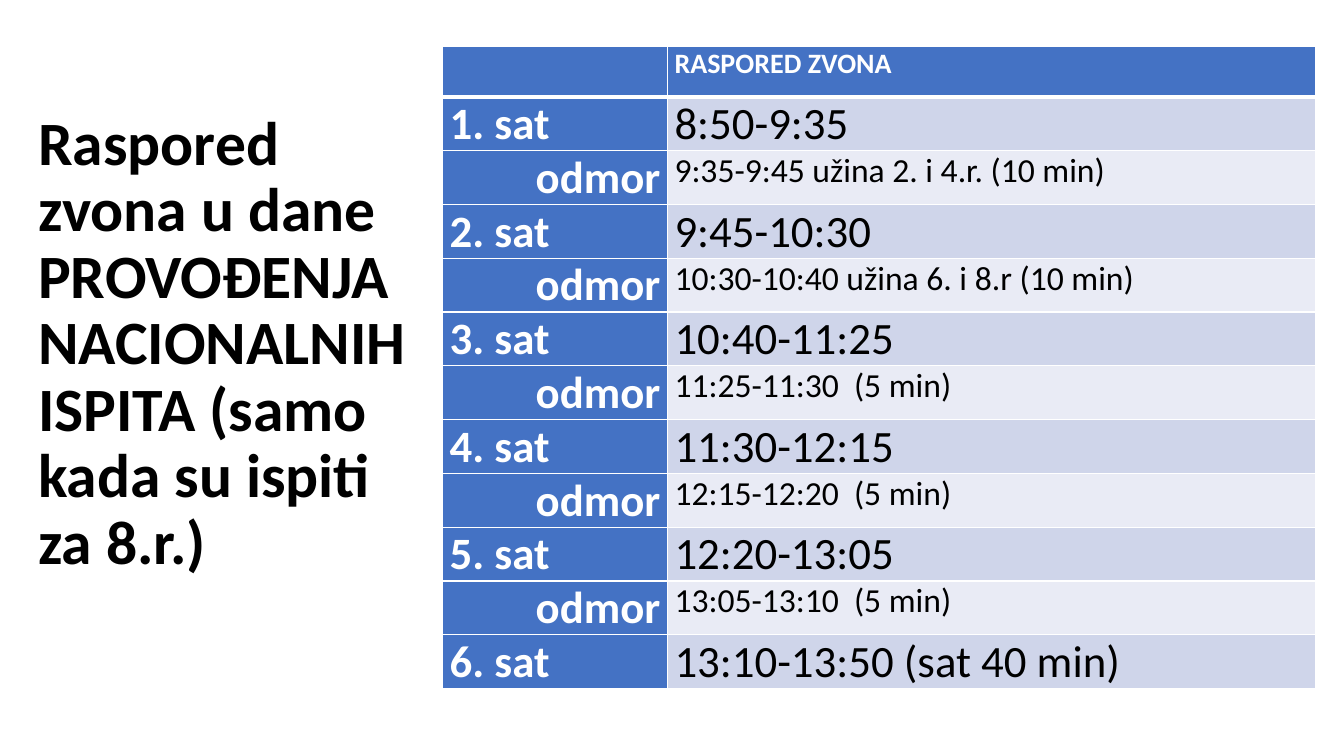
import pptx
import pptx.util
import pptx.dml.color
import pptx.enum.text
import pptx.oxml
import pptx.oxml.ns

TITLE = "Raspored zvona u dane PROVOĐENJA NACIONALNIH ISPITA (samo kada su ispiti za 8.r.)"
HEADING = "RASPORED ZVONA"
LESSONS = ["8:50-9:35", "9:45-10:30", "10:40-11:25", "11:30-12:15",
           "12:20-13:05", "13:10-13:50 (sat 40 min)"]
BREAKS = ["9:35-9:45 užina 2. i 4.r. (10 min)", "10:30-10:40 užina 6. i 8.r (10 min)",
          "11:25-11:30  (5 min)", "12:15-12:20  (5 min)", "13:05-13:10  (5 min)"]

FONT = "Calibri"
WHITE, BLACK, BLUE = "FFFFFF", "000000", "4472C4"
LESSON_FILL, BREAK_FILL = "CFD5EA", "E9EBF5"
WIDTH, HEIGHT = 13.33, 7.5
TITLE_BOX = (0.28, 0.95, 3.92, 5.6)
TABLE_LEFT, TABLE_TOP = 4.39, 0.46
COLUMNS = (2.23, 6.43)
HEADING_HEIGHT, ROW_HEIGHT = 0.5, 0.53
LEFT, RIGHT = pptx.enum.text.PP_ALIGN.LEFT, pptx.enum.text.PP_ALIGN.RIGHT

inch = pptx.util.Inches


def color(value):
    return pptx.dml.color.RGBColor.from_string(value)


def write(paragraph, text, size, ink, bold, align=LEFT):
    paragraph.alignment = align
    run = paragraph.add_run()
    run.text = text
    run.font.name = FONT
    run.font.size = pptx.util.Pt(size)
    run.font.bold = bold
    run.font.color.rgb = color(ink)


def add_borders(cell, top, bottom):
    properties = cell._tc.get_or_add_tcPr()
    for side, points in (("L", 1), ("R", 1), ("T", top), ("B", bottom)):
        properties.append(pptx.oxml.parse_xml(
            f'<a:ln{side} {pptx.oxml.ns.nsdecls("a")} w="{pptx.util.Pt(points)}">'
            f'<a:solidFill><a:srgbClr val="{WHITE}"/></a:solidFill></a:ln{side}>'))


def add_title(slide):
    frame = slide.shapes.add_textbox(*map(inch, TITLE_BOX)).text_frame
    frame.word_wrap = True
    frame.vertical_anchor = pptx.enum.text.MSO_ANCHOR.MIDDLE
    frame.margin_bottom = inch(0.71)
    frame.paragraphs[0].line_spacing = 0.9
    write(frame.paragraphs[0], TITLE, 44, BLACK, True)


def schedule_rows():
    rows = [(("", 20, WHITE, True), (HEADING, 20, WHITE, True), BLUE)]
    for index, lesson in enumerate(LESSONS):
        rows.append(((f"{index + 1}. sat", 32, WHITE, True),
                     (lesson, 32, BLACK, False), LESSON_FILL))
        if index < len(BREAKS):
            rows.append((("odmor", 32, WHITE, True, RIGHT),
                         (BREAKS[index], 24, BLACK, False), BREAK_FILL))
    return rows


def add_schedule(slide):
    rows = schedule_rows()
    heights = [HEADING_HEIGHT] + [ROW_HEIGHT] * (len(rows) - 1)
    schedule = slide.shapes.add_table(
        len(rows), len(COLUMNS), inch(TABLE_LEFT), inch(TABLE_TOP),
        inch(sum(COLUMNS)), inch(sum(heights))).table
    for column, width in zip(schedule.columns, COLUMNS):
        column.width = inch(width)
    for index, (label, time, time_fill) in enumerate(rows):
        schedule.rows[index].height = inch(heights[index])
        for place, (content, fill) in enumerate(((label, BLUE), (time, time_fill))):
            cell = schedule.cell(index, place)
            cell.margin_left = cell.margin_right = inch(0.07)
            cell.margin_top = cell.margin_bottom = 0
            add_borders(cell, 3 if index == 1 else 1, 3 if index == 0 else 1)
            cell.fill.solid()
            cell.fill.fore_color.rgb = color(fill)
            if content[0]:
                write(cell.text_frame.paragraphs[0], *content)


def main():
    deck = pptx.Presentation()
    deck.slide_width, deck.slide_height = inch(WIDTH), inch(HEIGHT)
    slide = deck.slides.add_slide(deck.slide_layouts[6])
    add_title(slide)
    add_schedule(slide)
    deck.save("out.pptx")


if __name__ == "__main__":
    main()
